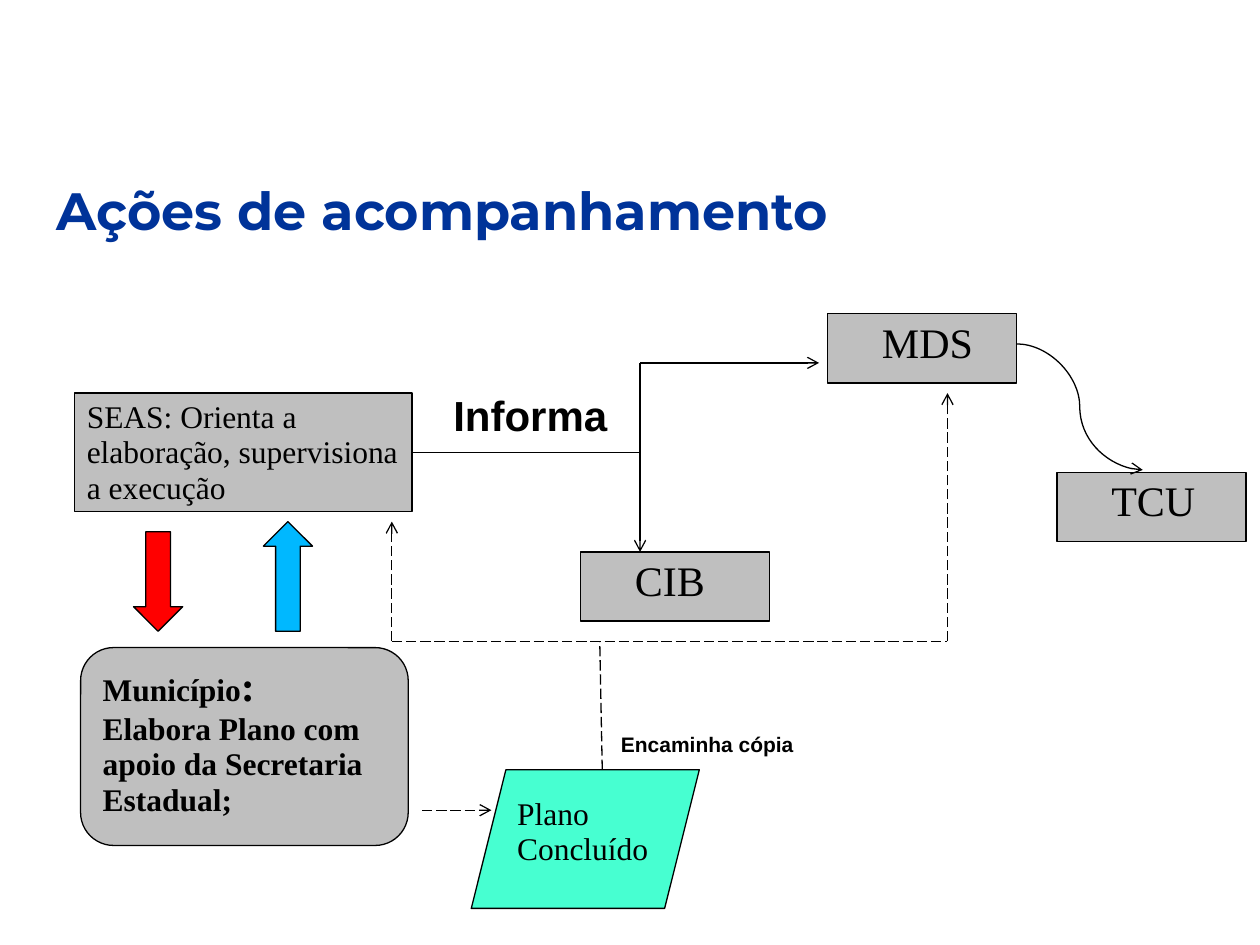
from dataclasses import dataclass

from pptx import Presentation
from pptx.dml.color import RGBColor
from pptx.enum.dml import MSO_LINE_DASH_STYLE as Dash
from pptx.enum.shapes import MSO_CONNECTOR as Link, MSO_SHAPE as Shape
from pptx.enum.text import MSO_ANCHOR as Anchor, MSO_AUTO_SIZE as AutoSize, PP_ALIGN as Align
from pptx.oxml.ns import qn
from pptx.util import Inches, Pt
from lxml.etree import SubElement

COLUMNS, ROWS = 100, 75
UNIT = Inches(10) // COLUMNS


@dataclass(frozen=True)
class Theme:
    ink: str = "000000"
    title: str = "003399"
    panel: str = "BFBFBF"
    down: str = "FF0000"
    up: str = "00B8FF"
    plan: str = "47FFD1"
    serif: str = "Times New Roman"
    sans: str = "Arial"
    heading: str = "Montserrat"
    title_size: int = 30
    large: int = 24
    body: int = 18
    small: int = 12
    outline: float = 0.75
    body_spacing: float = 0.95
    title_spacing: float = 1.18


THEME = Theme()


@dataclass(frozen=True)
class Box:
    """An area of the page in grid columns and rows."""
    left: float
    top: float
    width: float
    height: float

    def inner(self, left, top, width, height):
        return Box(self.left + left, self.top + top, width, height)

    def point(self, column, row):
        return grid(self.left + column), grid(self.top + row)

    def lengths(self):
        return [grid(n) for n in (self.left, self.top, self.width, self.height)]


def grid(count):
    return round(count * UNIT)


def style(font, face, size, color=THEME.ink, bold=False):
    font.name, font.size, font.bold = face, Pt(size), bold
    font.color.rgb = RGBColor.from_string(color)


def add_label(page, box, text, face, size, color=THEME.ink, wrap=False):
    label = page.shapes.add_textbox(*box.lengths())
    frame = label.text_frame
    frame.word_wrap = wrap
    para = frame.paragraphs[0]
    para.text = text
    style(para.font, face, size, color, bold=True)
    return frame


def add_block(page, kind, box, fill, lines=(), size=THEME.body, bold=False):
    block = page.shapes.add_shape(kind, *box.lengths())
    block.shadow.inherit = False
    block.fill.solid()
    block.fill.fore_color.rgb = RGBColor.from_string(fill)
    block.line.color.rgb = RGBColor.from_string(THEME.ink)
    block.line.width = Pt(THEME.outline)
    frame = block.text_frame
    frame.word_wrap, frame.vertical_anchor = True, Anchor.TOP
    frame.text = "\n".join(lines)
    for para in frame.paragraphs:
        para.line_spacing = THEME.body_spacing
        para.alignment = Align.LEFT
        style(para.font, THEME.serif, size, bold=bold)
    return frame


def add_link(page, box, start, end, arrow=False, dashed=False, kind=Link.STRAIGHT):
    link = page.shapes.add_connector(kind, *box.point(*start), *box.point(*end))
    link.line.color.rgb = RGBColor.from_string(THEME.ink)
    link.line.width = Pt(THEME.outline)
    if dashed:
        link.line.dash_style = Dash.LONG_DASH
    properties = link._element.spPr
    if arrow:
        SubElement(properties.find(qn("a:ln")), qn("a:tailEnd"), type="arrow")
    SubElement(properties, qn("a:effectLst"))


def add_title(page, box):
    frame = add_label(page, box, "Ações de acompanhamento", THEME.heading,
                      THEME.title_size, THEME.title, wrap=True)
    frame.vertical_anchor = Anchor.MIDDLE
    frame.paragraphs[0].line_spacing = THEME.title_spacing


def add_reporting(page, box):
    """SEAS on the left reports to the bodies on the right."""
    add_block(page, Shape.RECTANGLE, box.inner(0, 6.3, 26.8, 9.4), THEME.panel,
              ["SEAS: Orienta a elaboração, supervisiona a execução"])
    for name, left, top in (("MDS", 59.8, 0), ("CIB", 40.2, 18.9), ("TCU", 78, 12.6)):
        frame = add_block(page, Shape.RECTANGLE, box.inner(left, top, 15, 5.5),
                          THEME.panel, [name], THEME.large)
        frame.margin_left = grid(4.3)
    fork = 44.9
    add_link(page, box, (26.8, 11), (fork, 11))
    add_link(page, box, (fork, 3.9), (fork, 18.9), arrow=True)
    add_link(page, box, (fork, 3.9), (59.1, 3.9), arrow=True)
    add_link(page, box, (74.8, 2.4), (84.8, 12.4), arrow=True, kind=Link.CURVE)
    frame = add_label(page, box.inner(29.1, 5.5, 14.4, 5), "Informa",
                      THEME.sans, THEME.large)
    frame.auto_size = AutoSize.SHAPE_TO_FIT_TEXT


def add_municipality(page, box):
    """The municipality, exchanging arrows with SEAS above it."""
    add_block(page, Shape.DOWN_ARROW, box.inner(4.7, 0.8, 3.9, 7.9), THEME.down)
    add_block(page, Shape.UP_ARROW, box.inner(15, 0, 3.9, 8.7), THEME.up)
    frame = add_block(
        page, Shape.ROUNDED_RECTANGLE, box.inner(0.5, 10, 26, 15.7), THEME.panel,
        ["Município", "Elabora Plano com apoio da Secretaria Estadual;"], bold=True)
    colon = frame.paragraphs[0].add_run()
    colon.text = ":"
    colon.font.size = Pt(THEME.large)


def add_plan_copies(page, box):
    """The finished plan and the dashed routes its copies take."""
    add_block(page, Shape.PARALLELOGRAM, box.inner(6.3, 29.9, 18.1, 11), THEME.plan,
              ["Plano Concluído"])
    rail, right = 19.7, 44.1
    routes = (((2.4, 33.1), (7.9, 33.1), True),
              ((0, rail), (right, rail), False),
              ((right, rail), (right, 0), True),
              ((0, rail), (0, 10.2), True),
              ((16.7, 29.9), (16.5, rail), False))
    for start, end, arrow in routes:
        add_link(page, box, start, end, arrow, dashed=True)
    frame = add_label(page, box.inner(17.2, 26.4, 15.9, 3), "Encaminha cópia",
                      THEME.sans, THEME.small)
    frame.auto_size = AutoSize.SHAPE_TO_FIT_TEXT


def main():
    deck = Presentation()
    deck.slide_width, deck.slide_height = COLUMNS * UNIT, ROWS * UNIT
    page = deck.slides.add_slide(deck.slide_layouts[6])
    add_title(page, Box(3.5, 10.7, 85, 11))
    add_reporting(page, Box(5.9, 24.9, 93, 24.4))
    add_municipality(page, Box(5.9, 41.4, 26.8, 25.7))
    add_plan_copies(page, Box(31.1, 31.2, 44.1, 40.9))
    deck.save("out.pptx")


if __name__ == "__main__":
    main()
